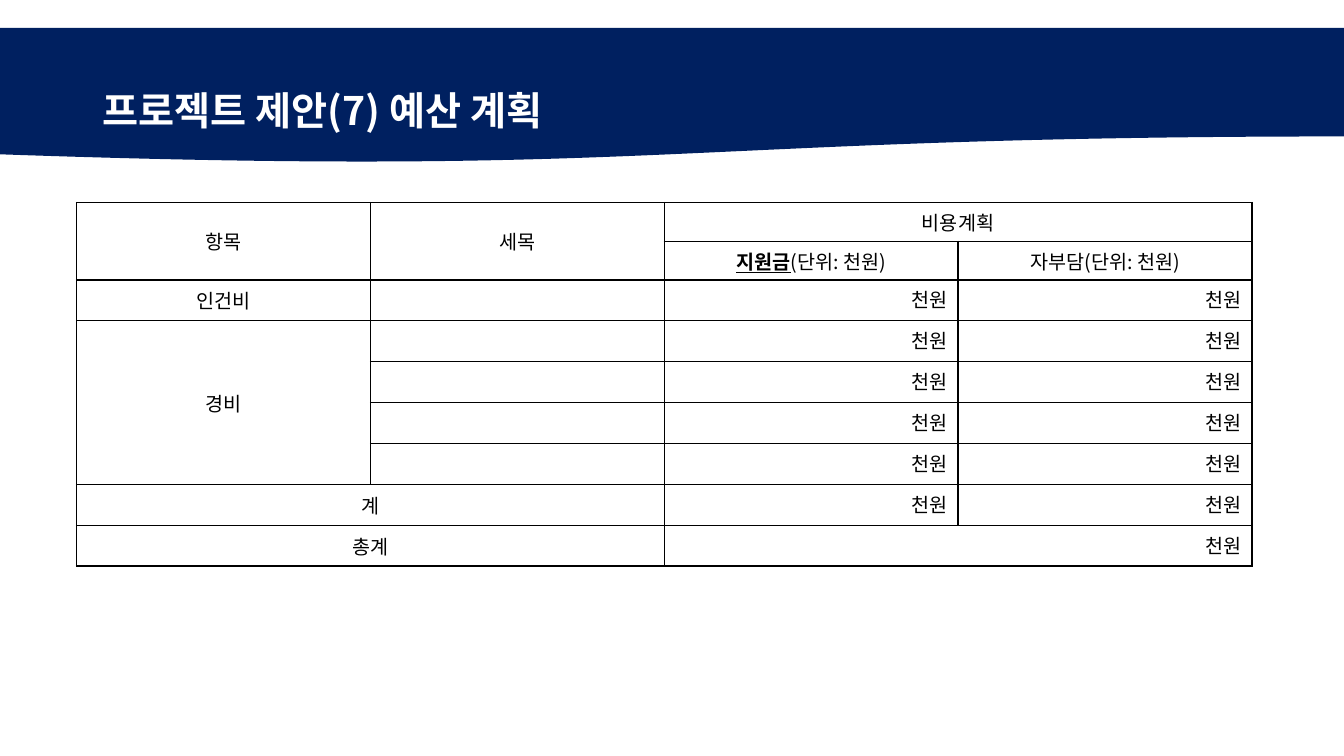
import pptx
import pptx.dml.color
import pptx.enum.shapes
import pptx.enum.text
import pptx.oxml
import pptx.oxml.ns
import pptx.util

FONT = "Noto Sans CJK KR"
NAVY, WHITE, BLACK = "002060", "FFFFFF", "000000"
ALIGN = pptx.enum.text.PP_ALIGN
MIDDLE = pptx.enum.text.MSO_ANCHOR.MIDDLE
WIDTH, HEIGHT = pptx.util.Inches(13.333), pptx.util.Inches(7.5)
COLUMN_WIDTH = pptx.util.Inches(2.915)
HEADER_HEIGHT, BODY_HEIGHT = pptx.util.Inches(0.38), pptx.util.Inches(0.405)
HEADER_ROWS, ROWS, COLUMNS = 2, 9, 4
AMOUNT = "천원"
UNIT = "(단위: 천원)"
MERGES = [((0, 0), (1, 0)), ((0, 1), (1, 1)), ((0, 2), (0, 3)), ((3, 0), (6, 0)),
          ((7, 0), (7, 1)), ((8, 0), (8, 1)), ((8, 2), (8, 3))]
LABELS = {(0, 0): "항목", (0, 1): "세목", (0, 2): "비용계획", (1, 3): "자부담" + UNIT,
          (2, 0): "인건비", (3, 0): "경비", (7, 0): "계", (8, 0): "총계"}


def color(value):
    """Turn a hex string into a colour."""
    return pptx.dml.color.RGBColor.from_string(value)


def write(para, text, size=14, ink=BLACK, bold=False, underline=False, align=ALIGN.CENTER):
    """Add formatted text to a paragraph."""
    para.alignment = align
    span = para.add_run()
    span.text = text
    span.font.size = pptx.util.Pt(size)
    span.font.name = FONT
    span.font.bold = bold
    span.font.underline = underline
    span.font.color.rgb = color(ink)
    east_asian = pptx.oxml.parse_xml(
        f'<a:ea {pptx.oxml.ns.nsdecls("a")} typeface="{FONT}"/>')
    span.font._element.find(pptx.oxml.ns.qn("a:latin")).addnext(east_asian)


def place(box, left, top, width, height):
    """Place a shape by shares of the slide's size."""
    box.left, box.width = int(WIDTH * left), int(WIDTH * width)
    box.top, box.height = int(HEIGHT * top), int(HEIGHT * height)


def add_title(page, text):
    """Fill the title placeholder and lay the wavy band behind it."""
    title = page.shapes.title
    place(title, 0.069, 0.053, 0.8625, 0.193)
    title.text_frame.vertical_anchor = MIDDLE
    title.text_frame.word_wrap = True
    para = title.text_frame.paragraphs[0]
    para.line_spacing = 0.9
    write(para, text, size=28, ink=WHITE, bold=True, align=ALIGN.LEFT)
    band = page.shapes.add_shape(
        pptx.enum.shapes.MSO_SHAPE.FLOWCHART_DOCUMENT, 0, 0, WIDTH, HEIGHT)
    place(band, 0, 0.037, 1, 0.179)
    band.shadow.inherit = False
    band.fill.solid()
    band.fill.fore_color.rgb = color(NAVY)
    band.line.fill.background()
    title.element.addprevious(band.element)


def frame_cell(cell):
    """Clear a cell's fill and rule its four sides in black."""
    cell.fill.background()
    properties = cell._tc.get_or_add_tcPr()
    for index, side in enumerate(("lnL", "lnR", "lnT", "lnB")):
        properties.insert(index, pptx.oxml.parse_xml(
            f'<a:{side} {pptx.oxml.ns.nsdecls("a")} w="{pptx.util.Pt(1)}"><a:solidFill>'
            f'<a:srgbClr val="{BLACK}"/></a:solidFill></a:{side}>'))


def add_budget_table(page):
    """Add the budget grid with its merged headings and amounts."""
    height = HEADER_HEIGHT * HEADER_ROWS + BODY_HEIGHT * (ROWS - HEADER_ROWS)
    table = page.shapes.add_table(
        ROWS, COLUMNS, int(WIDTH * 0.057), int(HEIGHT * 0.268),
        COLUMN_WIDTH * COLUMNS, height).table
    table.first_row = table.horz_banding = False
    for index, row in enumerate(table.rows):
        row.height = HEADER_HEIGHT if index < HEADER_ROWS else BODY_HEIGHT
    for cell in table.iter_cells():
        frame_cell(cell)
    for start, end in MERGES:
        table.cell(*start).merge(table.cell(*end))
    for position, text in LABELS.items():
        cell = table.cell(*position)
        cell.vertical_anchor = MIDDLE
        write(cell.text_frame.paragraphs[0], text)
    grant = table.cell(1, 2)
    grant.vertical_anchor = MIDDLE
    write(grant.text_frame.paragraphs[0], "지원금", bold=True, underline=True)
    write(grant.text_frame.paragraphs[0], UNIT)
    for row in range(HEADER_ROWS, ROWS):
        for column in (2, 3):
            cell = table.cell(row, column)
            if not cell.is_spanned:
                write(cell.text_frame.paragraphs[0], AMOUNT, align=ALIGN.RIGHT)


def main():
    """Build the budget plan slide."""
    deck = pptx.Presentation()
    deck.slide_width, deck.slide_height = WIDTH, HEIGHT
    page = deck.slides.add_slide(deck.slide_layouts[5])
    add_title(page, "프로젝트 제안(7) 예산 계획")
    add_budget_table(page)
    deck.save("out.pptx")


if __name__ == "__main__":
    main()
